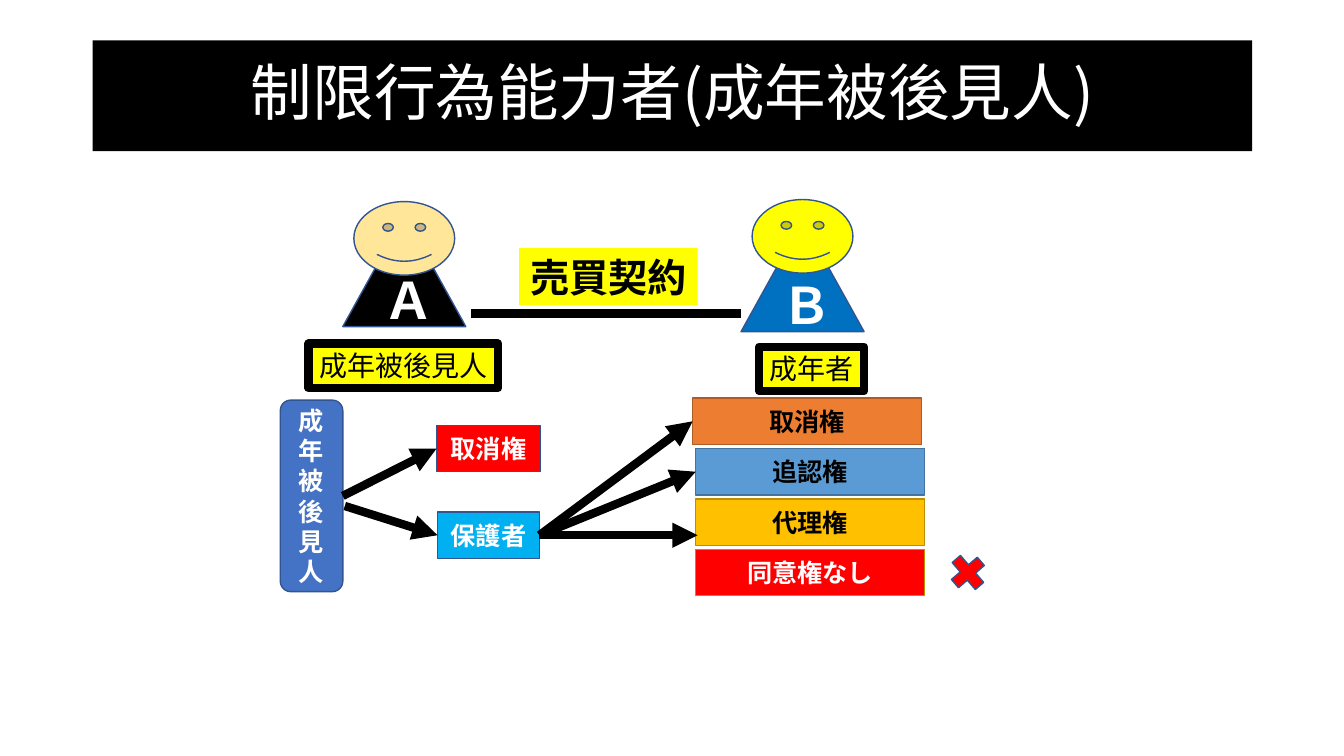
"""Build a slide on legal capacity: an adult ward, a counterparty and the guardian's rights."""
from dataclasses import dataclass

from lxml import etree
from pptx import Presentation
from pptx.dml.color import RGBColor
from pptx.enum.shapes import MSO_CONNECTOR, MSO_SHAPE
from pptx.enum.text import MSO_ANCHOR, MSO_AUTO_SIZE, PP_ALIGN
from pptx.oxml.ns import qn
from pptx.util import Inches, Pt

RECT, ROUNDED = MSO_SHAPE.RECTANGLE, MSO_SHAPE.ROUNDED_RECTANGLE
TRIANGLE, SMILEY = MSO_SHAPE.ISOSCELES_TRIANGLE, MSO_SHAPE.SMILEY_FACE
PLUS, STRAIGHT = MSO_SHAPE.MATH_PLUS, MSO_CONNECTOR.STRAIGHT
MIDDLE, TOP, CENTER = MSO_ANCHOR.MIDDLE, MSO_ANCHOR.TOP, PP_ALIGN.CENTER
FIT_SHAPE = MSO_AUTO_SIZE.SHAPE_TO_FIT_TEXT
LEFT_SIDE, RIGHT_SIDE = 1, 3


@dataclass(frozen=True)
class Theme:
    font: str = "Noto Sans CJK JP"
    letter_font: str = "Roboto"
    black: str = "000000"
    white: str = "FFFFFF"
    yellow: str = "FFFF00"
    skin: str = "FFE699"
    red: str = "FF0000"
    deep_blue: str = "0070C0"
    ward_blue: str = "4472C4"
    sky: str = "00B0F0"
    orange: str = "ED7D31"
    blue: str = "5B9BD5"
    gold: str = "FFC000"
    navy_edge: str = "325491"
    orange_edge: str = "AF5C24"
    blue_edge: str = "43739E"
    gold_edge: str = "BD8E00"
    title_size: int = 44
    letter_size: int = 36
    contract_size: int = 28
    role_size: int = 20
    box_size: int = 18
    thin: int = 1
    thick: int = 6


theme = Theme()
prs = Presentation()
prs.slide_width, prs.slide_height = Inches(13.33), Inches(7.5)
slide = prs.slides.add_slide(prs.slide_layouts[6])


def add_block(kind, place, fill, edge=None, text="", size=theme.box_size, color=theme.white,
              bold=True, font=theme.font, weight=theme.thin, fit=False):
    block = slide.shapes.add_shape(kind, *map(Inches, place))
    block.shadow.inherit = False
    block.fill.solid()
    block.fill.fore_color.rgb = RGBColor.from_string(fill)
    if edge:
        block.line.color.rgb = RGBColor.from_string(edge)
        block.line.width = Pt(weight)
    else:
        block.line.fill.background()
    if text:
        frame = block.text_frame
        frame.word_wrap = not fit
        frame.vertical_anchor = TOP if fit else MIDDLE
        if fit:
            frame.auto_size = FIT_SHAPE
        paragraph = frame.paragraphs[0]
        paragraph.alignment = CENTER
        run = paragraph.add_run()
        run.text = text
        for name, value in {"size": Pt(size), "bold": bold, "name": font}.items():
            setattr(run.font, name, value)
        run.font.color.rgb = RGBColor.from_string(color)
        etree.SubElement(run.font._element, qn("a:ea"), typeface=font)
    return block


def add_link(start, end, source=None, target=None, arrow=True):
    link = slide.shapes.add_connector(STRAIGHT, *map(Inches, start + end))
    if source is not None:
        link.begin_connect(source, RIGHT_SIDE)
    if target is not None:
        link.end_connect(target, LEFT_SIDE)
    link.line.color.rgb = RGBColor.from_string(theme.black)
    link.line.width = Pt(theme.thick)
    if arrow:
        etree.SubElement(link.line._get_or_add_ln(), qn("a:tailEnd"), type="triangle")
    etree.SubElement(link._element.spPr, qn("a:effectLst"))


title = add_block(RECT, (0.92, 0.4, 11.5, 1.1), theme.black, text="制限行為能力者(成年被後見人)",
                  size=theme.title_size, bold=False)
title.text_frame.paragraphs[0].line_spacing = 0.9

people = [
    ("Ａ", 3.4, 2.14, 2, theme.black, theme.skin, theme.letter_font),
    ("Ｂ", 7.35, 2.19, 1.98, theme.deep_blue, theme.yellow, theme.font),
]
for letter, left, body_top, face_top, body_fill, face_fill, font in people:
    add_block(TRIANGLE, (left, body_top, 1.22, 1.1), body_fill, theme.navy_edge,
              letter, theme.letter_size, font=font)
    add_block(SMILEY, (left + 0.11, face_top, 1, 0.73), face_fill, theme.navy_edge)

for role, place in [("成年被後見人", (3.06, 3.41, 1.88, 0.44)), ("成年者", (7.53, 3.44, 1.04, 0.44))]:
    add_block(RECT, place, theme.yellow, theme.black, role, theme.role_size, theme.black,
              bold=False, weight=theme.thick, fit=True)
add_block(RECT, (5.15, 2.46, 1.77, 0.57), theme.yellow, text="売買契約",
          size=theme.contract_size, color=theme.black, fit=True)
add_link((4.67, 3.11), (7.35, 3.11), arrow=False)

ward = add_block(ROUNDED, (2.78, 3.97, 0.62, 1.9), theme.ward_blue, theme.navy_edge, "成年被後見人")
ward_right = add_block(RECT, (4.33, 4.22, 1.03, 0.46), theme.red, theme.navy_edge, "取消権")
guardian = add_block(RECT, (4.34, 5.08, 1.01, 0.46), theme.sky, theme.navy_edge, "保護者")

rights = [
    ("取消権", 6.87, theme.orange, theme.orange_edge, theme.black),
    ("追認権", 6.9, theme.blue, theme.blue_edge, theme.black),
    ("代理権", 6.9, theme.gold, theme.gold_edge, theme.black),
    ("同意権なし", 6.9, theme.red, theme.gold_edge, theme.white),
]
guardian_rights = [
    add_block(RECT, (left, 3.95 + 0.5 * row, 2.27, 0.46), fill, edge, text, color=color)
    for row, (text, left, fill, edge, color) in enumerate(rights)
]
cross = add_block(PLUS, (9.36, 5.45, 0.48, 0.46), theme.red, theme.navy_edge)
cross.rotation = 49.3

add_link((3.4, 4.9), (4.33, 4.45), ward, ward_right)
add_link((3.42, 5.02), (4.34, 5.31), target=guardian)
for right, end in zip(guardian_rights[:2], [(6.87, 4.18), (6.9, 4.69)]):
    add_link((5.35, 5.31), end, guardian, right)
add_link((5.35, 5.31), (6.92, 5.31), guardian)

prs.save("out.pptx")
